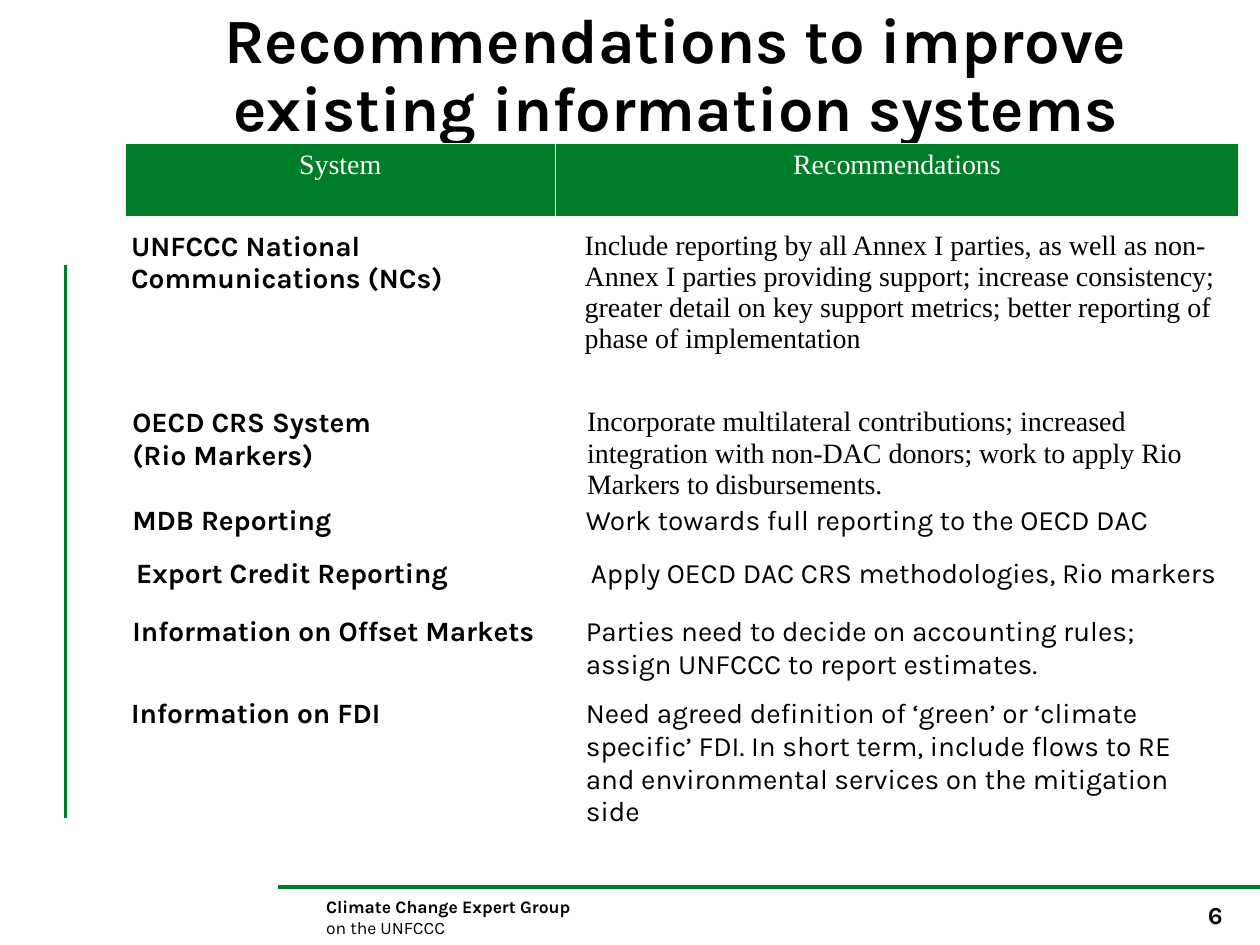
from pptx import Presentation
from pptx.dml.color import RGBColor
from pptx.enum.shapes import MSO_CONNECTOR as Conn
from pptx.enum.text import MSO_ANCHOR as Anchor, PP_ALIGN as Align
from pptx.oxml import parse_xml
from pptx.oxml.ns import nsdecls
from pptx.util import Inches, Pt

GREEN = RGBColor(0x00, 0x7D, 0x29)
BLACK = RGBColor(0x00, 0x00, 0x00)
WHITE = RGBColor(0xFF, 0xFF, 0xFF)
SANS = "Karla"
SERIF = "Times New Roman"
EDGES = {"lnL": 1, "lnR": 1, "lnT": 1, "lnB": 3}
ROW = 0.41

SYSTEMS = [
    (0.94, 1.78, 3.6, 5.24, SERIF, ["UNFCCC National Communications (NCs)"],
     "Include reporting by all Annex I parties, as well as non-Annex I parties "
     "providing support; increase consistency; greater detail on key support "
     "metrics; better reporting of phase of implementation"),
    (0.95, 3.18, 3.61, 5.25, SERIF, ["OECD CRS System ", "(Rio Markers)"],
     "Incorporate multilateral contributions; increased integration with "
     "non-DAC donors; work to apply Rio Markers to disbursements."),
    (0.95, 3.96, 3.6, 5.24, SANS, ["MDB Reporting"],
     "Work towards full reporting to the OECD DAC"),
    (0.98, 4.38, 3.61, 5.26, SANS, ["Export Credit Reporting"],
     "Apply OECD DAC CRS methodologies, Rio markers"),
    (0.95, 4.84, 3.6, 5.24, SANS, ["Information on Offset Markets"],
     "Parties need to decide on accounting rules; assign UNFCCC to report "
     "estimates."),
    (0.94, 5.49, 3.61, 5.25, SANS, ["Information on FDI"],
     "Need agreed definition of ‘green’ or ‘climate specific’ FDI. In short "
     "term, include flows to RE and environmental services on the mitigation "
     "side"),
]


def add_run(para, text, size, bold=False, face=SANS, color=BLACK):
    run = para.add_run()
    run.text = text
    font = run.font
    font.size = Pt(size)
    font.bold = bold
    font.name = face
    font.color.rgb = color


def add_title(slide, text):
    title = slide.shapes.title
    title.left, title.top = Inches(1.14), Inches(-0.01)
    title.width, title.height = Inches(8.44), Inches(1.25)
    frame = title.text_frame
    frame.word_wrap = True
    frame.vertical_anchor = Anchor.MIDDLE
    para = frame.paragraphs[0]
    para.alignment = Align.CENTER
    para.line_spacing = 0.9
    add_run(para, text, 36, True)


def add_box(slide, left, top, width, height):
    box = slide.shapes.add_textbox(
        Inches(left), Inches(top), Inches(width), Inches(height))
    box.text_frame.word_wrap = True
    return box.text_frame.paragraphs[0]


def add_rule(slide, x1, y1, x2, y2):
    rule = slide.shapes.add_connector(
        Conn.STRAIGHT, Inches(x1), Inches(y1), Inches(x2), Inches(y2))
    rule.line.color.rgb = GREEN
    rule.line.width = Pt(2.25)
    rule._element.spPr.append(parse_xml(f"<a:effectLst {nsdecls('a')}/>"))


def set_edges(cell):
    props = cell._tc.get_or_add_tcPr()
    for tag, width in EDGES.items():
        props.append(parse_xml(
            f'<a:{tag} {nsdecls("a")} w="{Pt(width)}"><a:solidFill>'
            f'<a:srgbClr val="{WHITE}"/></a:solidFill></a:{tag}>'))


def add_row(slide, left, top, widths, height, fill=None):
    table = slide.shapes.add_table(
        1, len(widths), Inches(left), Inches(top),
        Inches(sum(widths)), Inches(height)).table
    table.first_row = table.horz_banding = False
    for col, width in zip(table.columns, widths):
        col.width = Inches(width)
    for cell in table.iter_cells():
        set_edges(cell)
        if fill is None:
            cell.fill.background()
        else:
            cell.fill.solid()
            cell.fill.fore_color.rgb = fill
    return [cell.text_frame.paragraphs[0] for cell in table.iter_cells()]


def add_head(slide, names):
    paras = add_row(slide, 0.99, 1.14, [3.42, 5.42], 0.59, GREEN)
    for para, name in zip(paras, names):
        para.alignment = Align.CENTER
        add_run(para, name, 16, face=SERIF, color=WHITE)


def add_system(slide, left, top, first, second, face, lines, advice):
    label, body = add_row(slide, left, top, [first, second], ROW)
    for i, line in enumerate(lines):
        if i:
            label.add_line_break()
        add_run(label, line, 16, True)
    add_run(body, advice, 16, face=face)


def add_footer(slide):
    group = add_box(slide, 2.49, 7.06, 2.27, 0.44)
    add_run(group, "Climate Change Expert Group", 10, True)
    group.add_line_break()
    add_run(group, "on the UNFCCC", 10)
    number = add_box(slide, 9.29, 7.09, 0.71, 0.34)
    number.alignment = Align.CENTER
    add_run(number, "6", 14, True)


def main():
    prs = Presentation()
    prs.slide_width, prs.slide_height = Inches(10), Inches(7.5)
    slide = prs.slides.add_slide(prs.slide_layouts[5])
    add_footer(slide)
    add_rule(slide, 2.21, 7.04, 10, 7.04)
    add_rule(slide, 0.52, 2.1, 0.52, 6.49)
    add_title(slide, "Recommendations to improve existing information systems")
    add_head(slide, ["System", "Recommendations"])
    for system in SYSTEMS:
        add_system(slide, *system)
    prs.save("out.pptx")


if __name__ == "__main__":
    main()
